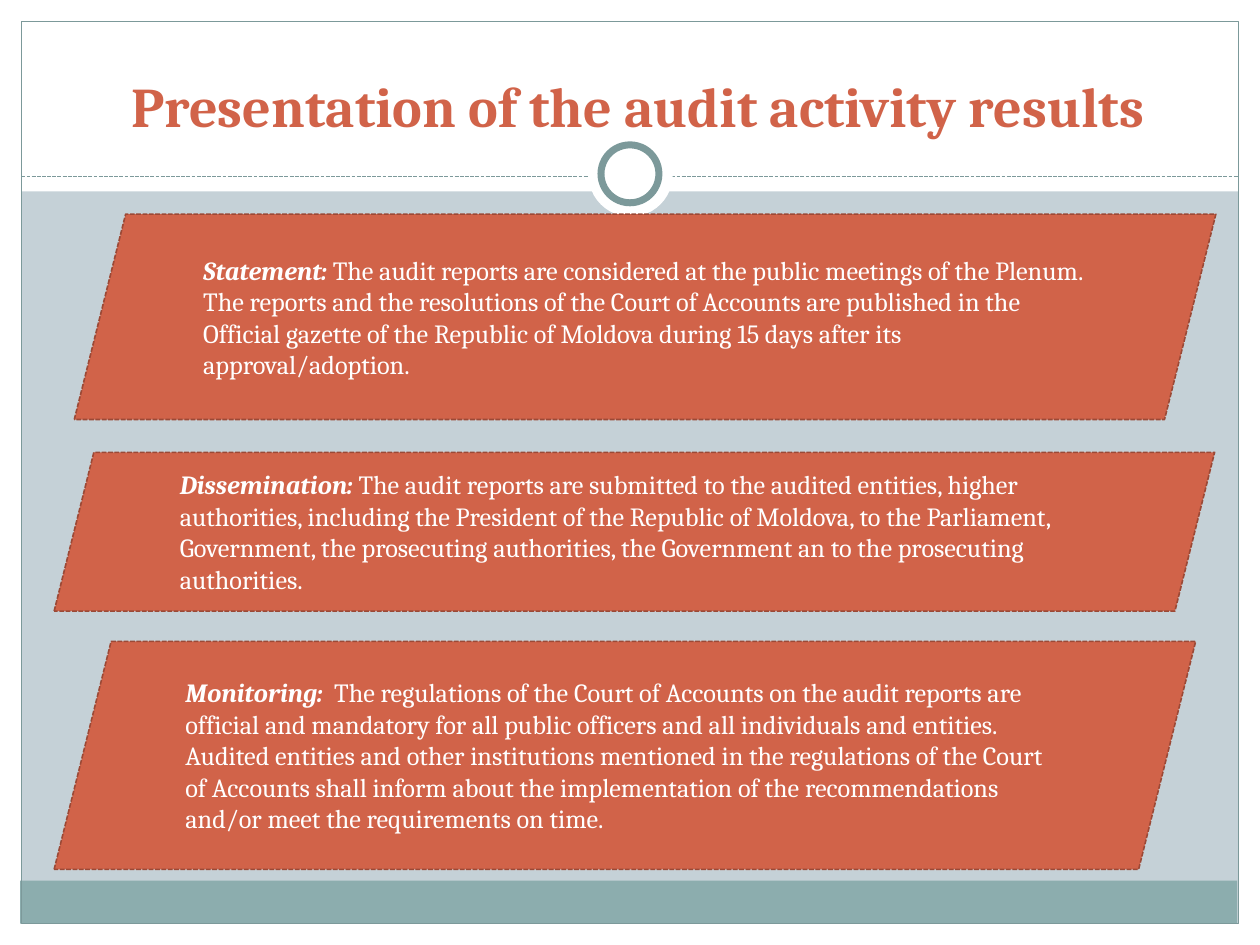
from lxml.etree import SubElement
from pptx import Presentation
from pptx.dml.color import RGBColor
from pptx.enum.dml import MSO_LINE as Dash
from pptx.enum.shapes import MSO_CONNECTOR as Link, MSO_SHAPE as Kind
from pptx.enum.text import MSO_ANCHOR as Anchor, PP_ALIGN as Align
from pptx.oxml.ns import qn
from pptx.util import Inches, Pt

WHITE, RUST, BROWN = "FFFFFF", "D16349", "9B4936"
TEAL, SLATE, MIST = "8CADAE", "7C999A", "C5D1D7"


def color(code):
    return RGBColor.from_string(code)


class Deck:
    font = "Cambria"

    def __init__(self, wide, high, back):
        self.file = Presentation()
        self.file.slide_width = Inches(wide)
        self.file.slide_height = Inches(high)
        self.slide = self.file.slides.add_slide(self.file.slide_layouts[6])
        fill = self.slide.background.fill
        fill.solid()
        fill.fore_color.rgb = color(back)

    def stroke(self, line, code, width, dash=None):
        line.color.rgb = color(code)
        line.width = Pt(width)
        if dash:
            line.dash_style = dash

    def shape(self, kind, box, fill=None, line=None):
        item = self.slide.shapes.add_shape(kind, *map(Inches, box))
        item.shadow.inherit = False
        if fill:
            item.fill.solid()
            item.fill.fore_color.rgb = color(fill)
        else:
            item.fill.background()
        if line:
            self.stroke(item.line, *line)
        else:
            item.line.fill.background()
        return item

    def rule(self, start, end, *line):
        item = self.slide.shapes.add_connector(
            Link.STRAIGHT, *map(Inches, start + end))
        self.stroke(item.line, *line)
        SubElement(item._element.spPr, qn("a:effectLst"))

    def label(self, item, runs, size, code, align, anchor):
        frame = item.text_frame
        frame.word_wrap = True
        frame.vertical_anchor = anchor
        para = frame.paragraphs[0]
        para.alignment = align
        for text, bold, slant in runs:
            run = para.add_run()
            run.text = text
            font = run.font
            font.name, font.size = self.font, Pt(size)
            font.bold, font.italic = bold, slant
            font.color.rgb = color(code)

    def title(self, box, text):
        item = self.slide.shapes.add_textbox(*map(Inches, box))
        self.label(item, [(text, True, False)], 32, RUST,
                   Align.CENTER, Anchor.BOTTOM)

    def panel(self, box, head, body):
        item = self.shape(Kind.PARALLELOGRAM, box, RUST,
                          (BROWN, 0.9, Dash.SQUARE_DOT))
        self.label(item, [(head, True, True), (body, False, False)], 15,
                   WHITE, Align.LEFT, Anchor.MIDDLE)


def main():
    deck = Deck(10, 7.5, MIST)
    edge = 0.17
    for box in ((0, 7.33, 10, edge), (0, 0, 10, 1.52),
                (0, 0, edge, 7.5), (9.83, 0, edge, 7.5)):
        deck.shape(Kind.RECTANGLE, box, WHITE)
    deck.shape(Kind.RECTANGLE, (0.16, 6.99, 9.66, 0.34), TEAL)
    deck.shape(Kind.RECTANGLE, (edge, edge, 9.66, 7.16), line=(SLATE, 0.75))
    deck.rule((edge, 1.4), (9.83, 1.4), SLATE, 0.75, Dash.SQUARE_DOT)
    deck.shape(Kind.OVAL, (4.67, 1.05, 0.67, 0.67), WHITE)
    deck.shape(Kind.OVAL, (4.77, 1.15, 0.46, 0.46), WHITE, (SLATE, 4))
    deck.title((0.33, 0.13, 9.47, 1.02),
               "Presentation of the audit activity results")

    panels = (
        ((0.59, 1.7, 9.06, 1.63), "Statement: ",
         "The audit reports are considered at the public meetings of the "
         "Plenum. The reports and the resolutions of the Court of Accounts "
         "are published in the Official gazette of the Republic of Moldova "
         "during 15 days after its approval/adoption."),
        ((0.43, 3.59, 9.21, 1.26), "Dissemination: ",
         "The audit reports are submitted to the audited entities, higher "
         "authorities, including the President of the Republic of Moldova, "
         "to the Parliament, Government, the prosecuting authorities, the "
         "Government an to the prosecuting authorities."),
        ((0.43, 5.09, 9.06, 1.81), "Monitoring:  ",
         "The regulations of the Court of Accounts on the audit reports are "
         "official and mandatory for all public officers and all individuals "
         "and entities. Audited entities and other institutions mentioned in "
         "the regulations of the Court of Accounts shall inform about the "
         "implementation of the recommendations and/or meet the requirements "
         "on time."),
    )
    for panel in panels:
        deck.panel(*panel)
    deck.file.save("out.pptx")


if __name__ == "__main__":
    main()
